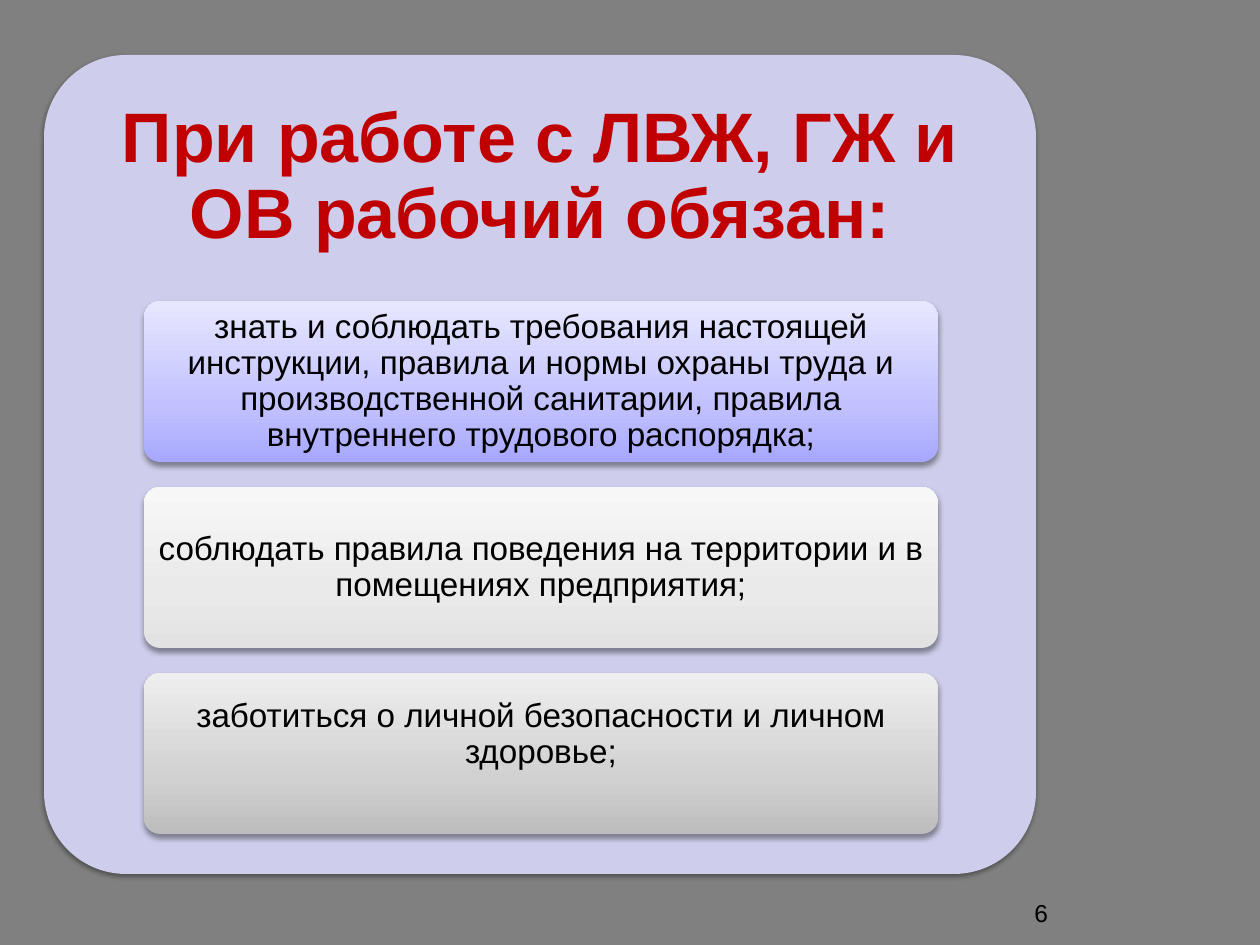
from copy import deepcopy

from lxml.etree import SubElement
from pptx import Presentation
from pptx.dml.color import RGBColor
from pptx.enum.shapes import MSO_SHAPE
from pptx.enum.text import MSO_ANCHOR, MSO_AUTO_SIZE, PP_ALIGN
from pptx.oxml.ns import qn
from pptx.util import Emu, Pt

EMU_PER_PX = 914400 / 126

BACKGROUND = RGBColor(0x80, 0x80, 0x80)
PANEL = RGBColor(0xCE, 0xCE, 0xEC)
RED = RGBColor(0xC0, 0x00, 0x00)
BLACK = RGBColor(0x00, 0x00, 0x00)
# Gradient colours run from the bottom of a card to its top.
LILAC = [RGBColor(0xA7, 0xA7, 0xFF), RGBColor(0xC1, 0xC1, 0xFF), RGBColor(0xE7, 0xE7, 0xFF)]
PALE = [RGBColor(0xE2, 0xE2, 0xE2), RGBColor(0xEA, 0xEA, 0xEA), RGBColor(0xF7, 0xF7, 0xF7)]
GREY = [RGBColor(0xBD, 0xBD, 0xBD), RGBColor(0xD1, 0xD1, 0xD1), RGBColor(0xEE, 0xEE, 0xEE)]
STOPS = (0, 0.35, 1)

PANEL_BOX = (44, 55, 992, 819)
TITLE_BOX = (44, 55, 992, 246)
NUMBER_BOX = (799, 892, 262, 39)
CARD_LEFT, CARD_TOP, CARD_WIDTH, CARD_HEIGHT, CARD_PITCH = 144, 301, 794, 161, 186

# Text, gradient colours and bottom inset of each card.
CARDS = [
    ("знать и соблюдать требования настоящей инструкции, правила и нормы охраны труда "
     "и производственной санитарии, правила внутреннего трудового распорядка;", LILAC, 1),
    ("соблюдать правила поведения на территории и в помещениях предприятия;", PALE, 1),
    ("заботиться о личной безопасности и личном здоровье;", GREY, 39),
]


def px(length):
    return Emu(round(length * EMU_PER_PX))


class SlideBuilder:
    font_name = "Arial"
    line_spacing = 0.9

    def __init__(self, slide):
        self.slide = slide
        fill = slide.background.fill
        fill.solid()
        fill.fore_color.rgb = BACKGROUND

    def set_text(self, shape, text, size, color, insets, bold=False,
                 align=PP_ALIGN.CENTER, anchor=MSO_ANCHOR.MIDDLE, spacing=line_spacing):
        """Fill a shape with one paragraph; insets are left, top, right, bottom."""
        frame = shape.text_frame
        frame.word_wrap = True
        frame.auto_size = MSO_AUTO_SIZE.NONE
        frame.vertical_anchor = anchor
        (frame.margin_left, frame.margin_top,
         frame.margin_right, frame.margin_bottom) = map(px, insets)
        paragraph = frame.paragraphs[0]
        paragraph.text = text
        paragraph.alignment = align
        paragraph.line_spacing = spacing
        paragraph.space_before = Pt(0)
        font = paragraph.font
        font.name, font.size, font.bold = self.font_name, Pt(size), bold
        font.color.rgb = color

    def rounded(self, box):
        shape = self.slide.shapes.add_shape(MSO_SHAPE.ROUNDED_RECTANGLE, *map(px, box))
        shape.adjustments[0] = 0.1
        shape.line.fill.background()
        return shape

    def shade(self, shape):
        """Add the soft shadow below a filled shape."""
        shape.shadow.inherit = False
        effects = shape._element.spPr.find(qn("a:effectLst"))
        shadow = SubElement(effects, qn("a:outerShdw"), blurRad=str(Pt(3.1)),
                            dist=str(Pt(1.6)), dir="5400000", rotWithShape="0")
        color = SubElement(shadow, qn("a:srgbClr"), val=str(BLACK))
        SubElement(color, qn("a:alpha"), val="38000")

    def panel(self, box):
        shape = self.rounded(box)
        shape.fill.solid()
        shape.fill.fore_color.rgb = PANEL
        self.shade(shape)

    def title(self, text, box):
        shape = self.slide.shapes.title
        shape.left, shape.top, shape.width, shape.height = map(px, box)
        self.set_text(shape, text, 40, RED, (21, 21, 21, 21), bold=True)
        # The placeholder starts at the back; lift it above the panel.
        self.slide.shapes._spTree.append(shape._element)

    def card(self, text, box, colors, bottom_inset):
        shape = self.rounded(box)
        fill = shape.fill
        fill.gradient()
        fill.gradient_angle = 90
        first_stop = shape._element.spPr.find(".//" + qn("a:gs"))
        first_stop.addnext(deepcopy(first_stop))
        for stop, color, position in zip(fill.gradient_stops, colors, STOPS):
            stop.color.rgb = color
            stop.position = position
        self.shade(shape)
        self.set_text(shape, text, 19, BLACK, (2, 1, 2, bottom_inset))

    def number(self, text, box):
        shape = self.slide.shapes.add_textbox(*map(px, box))
        self.set_text(shape, text, 14, BLACK, (13, 6, 13, 6), align=PP_ALIGN.RIGHT,
                      anchor=MSO_ANCHOR.TOP, spacing=1.0)


def main():
    presentation = Presentation()
    presentation.slide_width, presentation.slide_height = px(1260), px(945)
    title_only = presentation.slide_layouts[5]
    builder = SlideBuilder(presentation.slides.add_slide(title_only))
    builder.panel(PANEL_BOX)
    builder.title("При работе с ЛВЖ, ГЖ и ОВ рабочий обязан:", TITLE_BOX)
    for row, (text, colors, bottom_inset) in enumerate(CARDS):
        box = (CARD_LEFT, CARD_TOP + row * CARD_PITCH, CARD_WIDTH, CARD_HEIGHT)
        builder.card(text, box, colors, bottom_inset)
    builder.number("6", NUMBER_BOX)
    presentation.save("out.pptx")


if __name__ == "__main__":
    main()
